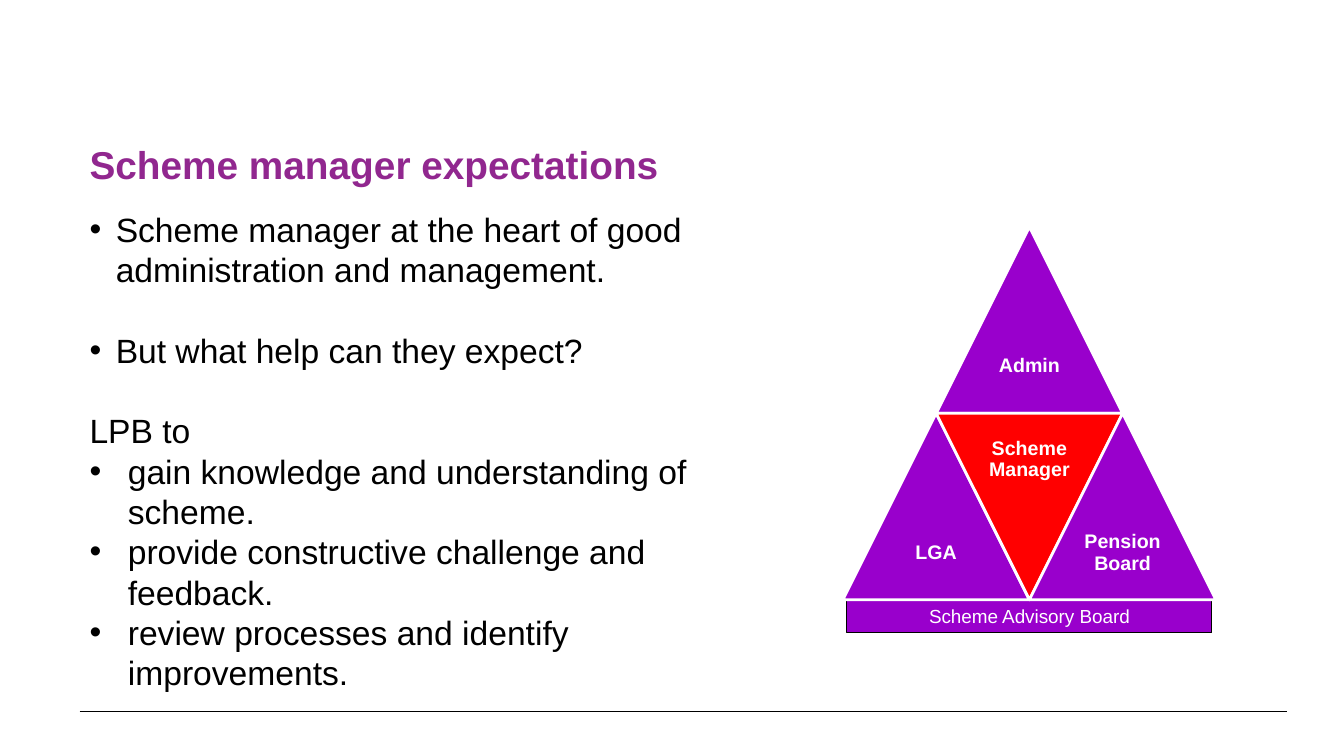
"""Build the scheme manager expectations slide."""
from lxml import etree
from pptx import Presentation
from pptx.dml.color import RGBColor
from pptx.enum.shapes import MSO_CONNECTOR, MSO_SHAPE
from pptx.enum.text import MSO_ANCHOR, PP_ALIGN
from pptx.oxml.ns import qn
from pptx.util import Inches, Pt

LEFT, CENTER = PP_ALIGN.LEFT, PP_ALIGN.CENTER
TOP, MIDDLE = MSO_ANCHOR.TOP, MSO_ANCHOR.MIDDLE
RECT, TRIANGLE = MSO_SHAPE.RECTANGLE, MSO_SHAPE.ISOSCELES_TRIANGLE
STRAIGHT = MSO_CONNECTOR.STRAIGHT
BLACK, WHITE, PLUM, PURPLE, RED = "000000", "FFFFFF", "91278F", "9900CC", "FF0000"

TITLE = "Scheme manager expectations"
PITCH = 28.8
POINTS = [
    ("Scheme manager at the heart of good administration and management.", 0.26, 0),
    ("But what help can they expect?", 0.26, PITCH),
    ("LPB to", 0, PITCH),
    ("gain knowledge and understanding of scheme.", 0.38, 0),
    ("provide constructive challenge and feedback.", 0.38, 0),
    ("review processes and identify improvements.", 0.38, 0),
]
BASE = "Scheme Advisory Board"
PARTS = [
    ("Admin", 1, 0, PURPLE, 0),
    ("LGA", 0, 1, PURPLE, 0),
    ("Scheme Manager", 1, 1, RED, 180),
    ("Pension Board", 2, 1, PURPLE, 0),
]
PEAK_X, PEAK_Y, SIDE = 8.36, 2.25, 1.85
HALF = SIDE / 2


def tint(code):
    return RGBColor.from_string(code)


def place(*box):
    return [Inches(v) for v in box]


def write(shape, items, size=24, color=BLACK, bold=False, align=LEFT,
          anchor=TOP, pad=(0.1, 0.05), pitch=1.0):
    frame = shape.text_frame
    frame.word_wrap = True
    frame.vertical_anchor = anchor
    frame.margin_left = frame.margin_right = Inches(pad[0])
    frame.margin_top = frame.margin_bottom = Inches(pad[1])
    for i, (text, indent, gap) in enumerate(items):
        para = frame.add_paragraph() if i else frame.paragraphs[0]
        if indent:
            props = para._p.get_or_add_pPr()
            props.set("marL", str(Inches(indent)))
            props.set("indent", str(-Inches(indent)))
            etree.SubElement(props, qn("a:buFont")).set("typeface", "Arial")
            etree.SubElement(props, qn("a:buChar")).set("char", "•")
        para.alignment = align
        para.line_spacing = pitch
        para.space_before = Pt(gap)
        run = para.add_run()
        run.text = text
        font = run.font
        font.name, font.size, font.bold = "Arial", Pt(size), bold
        font.color.rgb = tint(color)


def draw(shapes, kind, box, fill, line, width):
    shape = shapes.add_shape(kind, *place(*box))
    shape.shadow.inherit = False
    shape.fill.solid()
    shape.fill.fore_color.rgb = tint(fill)
    shape.line.color.rgb = tint(line)
    shape.line.width = Pt(width)
    return shape


def main():
    deck = Presentation()
    deck.slide_width, deck.slide_height = place(13.33, 7.5)
    shapes = deck.slides.add_slide(deck.slide_layouts[6]).shapes

    rule = shapes.add_connector(STRAIGHT, *place(0.79, 7.06, 12.76, 7.06))
    rule.line.color.rgb = tint(BLACK)
    rule.line.width = Pt(0.75)
    etree.SubElement(rule._element.spPr, qn("a:effectLst"))

    title = shapes.add_textbox(*place(0.79, 1.31, 12, 0.63))
    write(title, [(TITLE, 0, 0)], size=27.7, color=PLUM, bold=True, anchor=MIDDLE)
    body = shapes.add_textbox(*place(0.79, 2.02, 7.14, 4.68))
    write(body, POINTS, pitch=Pt(PITCH))

    base = draw(shapes, RECT, (8.4, 5.95, 3.62, 0.33), PURPLE, BLACK, 0.75)
    write(base, [(BASE, 0, 0)], size=13.5, color=WHITE, align=CENTER)

    group = shapes.add_group_shape().shapes
    for name, col, row, fill, turn in PARTS:
        x, y = PEAK_X + col * HALF, PEAK_Y + row * SIDE
        part = draw(group, TRIANGLE, (x, y, SIDE, SIDE), fill, WHITE, 2)
        part.rotation = turn
        drop = 0 if turn else HALF
        label = group.add_textbox(*place(x + HALF / 2, y + drop, HALF, HALF))
        write(label, [(name, 0, 0)], size=14, color=WHITE, bold=True, align=CENTER,
              anchor=MIDDLE, pad=(0.06, 0.06), pitch=0.9)

    deck.save("out.pptx")


if __name__ == "__main__":
    main()
